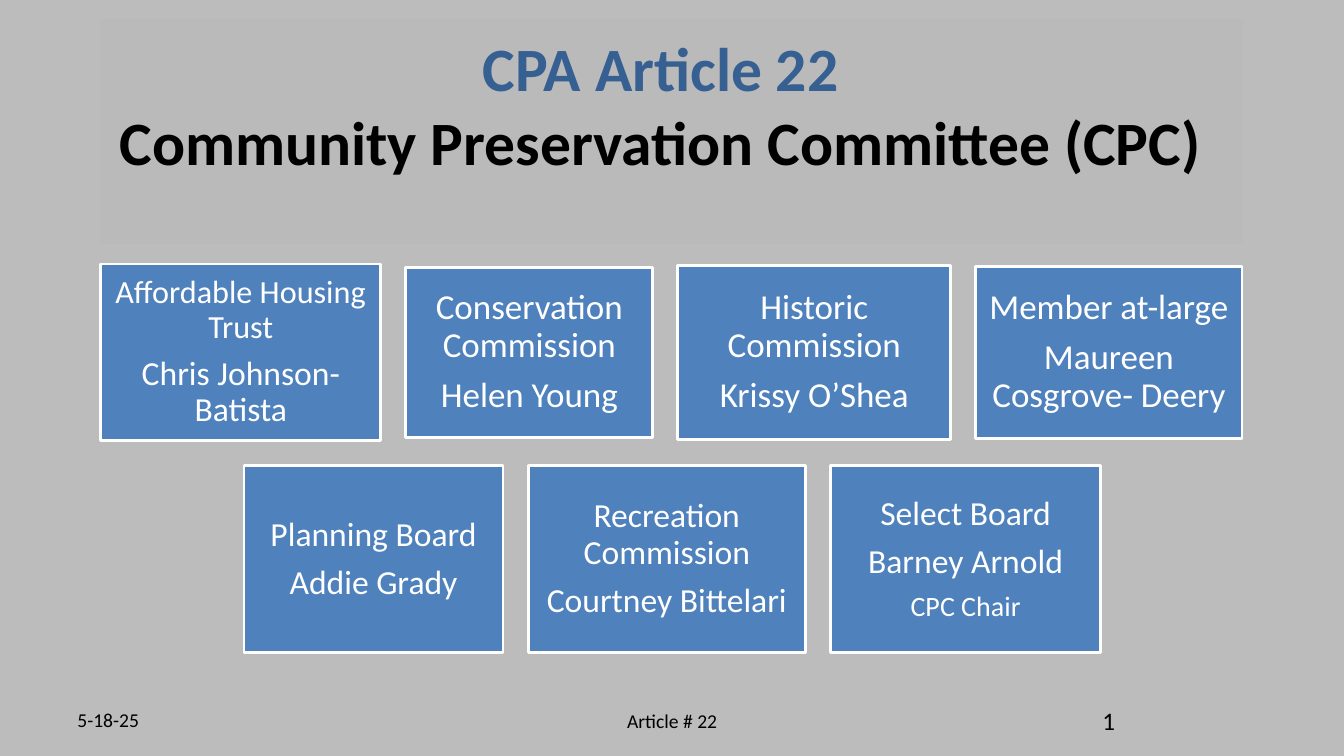
import pptx
import pptx.dml.color
import pptx.enum.shapes
import pptx.enum.text
import pptx.util

Cm = pptx.util.Cm
Pt = pptx.util.Pt
RGBColor = pptx.dml.color.RGBColor
Align = pptx.enum.text.PP_ALIGN
Anchor = pptx.enum.text.MSO_ANCHOR

BLACK = RGBColor(0x00, 0x00, 0x00)
WHITE = RGBColor(0xFF, 0xFF, 0xFF)
BACKGROUND = RGBColor(0xBC, 0xBC, 0xBC)
TITLE_FILL = RGBColor(0xBA, 0xBA, 0xBA)
TITLE_BLUE = RGBColor(0x37, 0x60, 0x92)
CARD_BLUE = RGBColor(0x4F, 0x81, 0xBD)

CARD_GAP = 0.63
# Each row: left edge, vertical centre, cards as (width, height, [(text, size), ...])
CARD_ROWS = [
    (2.54, 8.88, [
        (7.06, 4.45, [("Affordable Housing Trust", 23), ("Chris Johnson-Batista", 24)]),
        (6.22, 4.29, [("Conservation Commission", 25), ("Helen Young", 25)]),
        (6.88, 4.39, [("Historic Commission", 25), ("Krissy O’Shea", 25)]),
        (6.71, 4.34, [("Member at-large", 25), ("Maureen Cosgrove- Deery", 25)]),
    ]),
    (6.15, 14.09, [
        (6.53, 4.7, [("Planning Board", 24), ("Addie Grady", 24)]),
        (6.99, 4.7, [("Recreation Commission", 24), ("Courtney Bittelari", 24)]),
        (6.81, 4.7, [("Select Board", 24), ("Barney Arnold", 24), ("CPC Chair", 20)]),
    ]),
]
# Text, left, width, height, size, alignment
FOOTERS = [
    ("5-18-25", 1.7, 9.04, 0.97, 14, Align.LEFT),
    ("Article # 22", 11.58, 10.72, 1.02, 14, Align.CENTER),
    ("1", 22.43, 5.92, 1.02, 18, Align.RIGHT),
]
FOOTER_TOP = 17.65


class SlideBuilder:
    font_name = "Calibri"

    def __init__(self, presentation):
        self.slide = presentation.slides.add_slide(presentation.slide_layouts[5])
        fill = self.slide.background.fill
        fill.solid()
        fill.fore_color.rgb = BACKGROUND

    def format_runs(self, paragraph, size, color, bold=False):
        for run in paragraph.runs:
            run.font.name = self.font_name
            run.font.size = Pt(size)
            run.font.bold = bold
            run.font.color.rgb = color

    def title(self, heading, subject):
        title = self.slide.shapes.title
        title.left, title.top = Cm(2.54), Cm(0.48)
        title.width, title.height = Cm(28.78), Cm(5.66)
        title.fill.solid()
        title.fill.fore_color.rgb = TITLE_FILL
        frame = title.text_frame
        frame.text = f"{heading}\v{subject}"
        frame.word_wrap = True
        frame.auto_size = pptx.enum.text.MSO_AUTO_SIZE.NONE
        frame.vertical_anchor = Anchor.MIDDLE
        frame.margin_left, frame.margin_right = Cm(0), Cm(0.55)
        frame.margin_top, frame.margin_bottom = Cm(0.13), Cm(1.5)
        paragraph = frame.paragraphs[0]
        paragraph.alignment = Align.CENTER
        self.format_runs(paragraph, 44, BLACK, bold=True)
        paragraph.runs[0].font.color.rgb = TITLE_BLUE

    def card(self, left, top, width, height, lines):
        card = self.slide.shapes.add_shape(
            pptx.enum.shapes.MSO_SHAPE.RECTANGLE,
            Cm(left), Cm(top), Cm(width), Cm(height))
        card.shadow.inherit = False
        card.fill.solid()
        card.fill.fore_color.rgb = CARD_BLUE
        card.line.color.rgb = WHITE
        card.line.width = Pt(2)
        frame = card.text_frame
        frame.text = "\n".join(text for text, size in lines)
        frame.word_wrap = True
        frame.vertical_anchor = Anchor.MIDDLE
        frame.margin_left = frame.margin_right = Cm(0.25)
        frame.margin_top = frame.margin_bottom = Cm(0.25)
        for paragraph, (text, size) in zip(frame.paragraphs, lines):
            paragraph.alignment = Align.CENTER
            paragraph.line_spacing = 0.9
            paragraph.space_after = Pt(0.35 * size)
            self.format_runs(paragraph, size, WHITE)

    def card_row(self, left, centre, cards):
        """Place cards left to right with equal gaps, centred on one line."""
        for width, height, lines in cards:
            self.card(left, centre - height / 2, width, height, lines)
            left += width + CARD_GAP

    def footer(self, text, left, width, height, size, alignment):
        box = self.slide.shapes.add_textbox(
            Cm(left), Cm(FOOTER_TOP), Cm(width), Cm(height))
        frame = box.text_frame
        frame.text = text
        frame.word_wrap = True
        frame.vertical_anchor = Anchor.MIDDLE
        paragraph = frame.paragraphs[0]
        paragraph.alignment = alignment
        self.format_runs(paragraph, size, BLACK)


def main():
    presentation = pptx.Presentation()
    presentation.slide_width, presentation.slide_height = Cm(33.87), Cm(19.05)
    builder = SlideBuilder(presentation)
    builder.title("CPA Article 22", "Community Preservation Committee (CPC)")
    for row in CARD_ROWS:
        builder.card_row(*row)
    for footer in FOOTERS:
        builder.footer(*footer)
    presentation.save("out.pptx")


if __name__ == "__main__":
    main()
